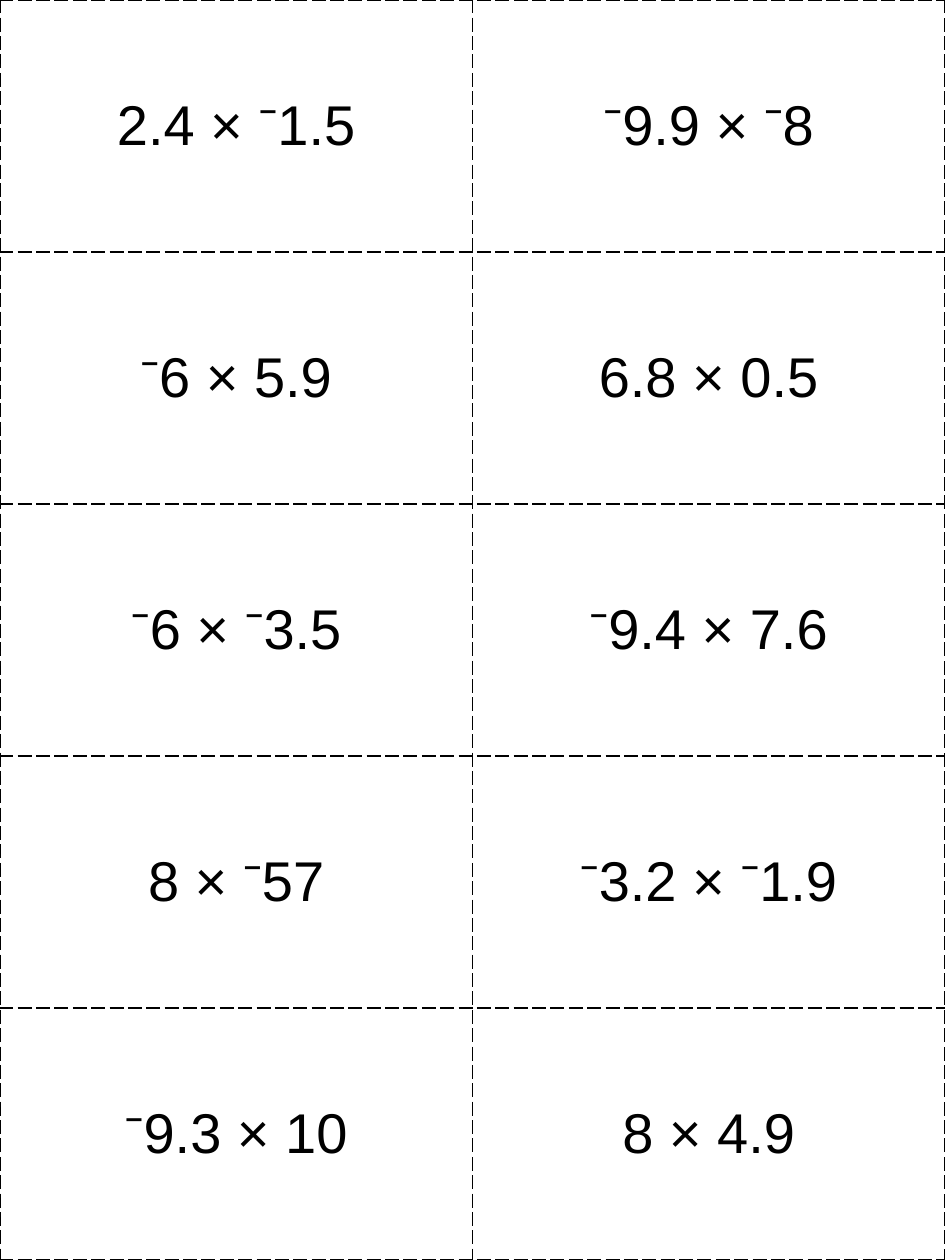
import pptx
import pptx.dml.color
import pptx.enum.text
import pptx.oxml.ns
import pptx.util
from lxml import etree
from pptx.util import Inches

PAGE_WIDTH, PAGE_HEIGHT = 7.5, 10
BLANK_LAYOUT = 6
PROBLEMS = [
    ["2.4 × ⁻1.5", "⁻9.9 × ⁻8"],
    ["⁻6 × 5.9", "6.8 × 0.5"],
    ["⁻6 × ⁻3.5", "⁻9.4 × 7.6"],
    ["8 × ⁻57", "⁻3.2 × ⁻1.9"],
    ["⁻9.3 × 10", "8 × 4.9"],
]


def color(hex_text):
    return pptx.dml.color.RGBColor.from_string(hex_text)


class CardSheet:
    """Holds the card style and the current slide."""

    font = "Arial"
    size = 32
    ink = "000000"
    border_width = 1
    border_dash = "lgDash"

    def __init__(self, page):
        self.page = page

    def add_cards(self, rows, left, top, width, height):
        """Add a table of equal cards filling the given area."""
        frame = self.page.shapes.add_table(
            len(rows), len(rows[0]),
            Inches(left), Inches(top), Inches(width), Inches(height))
        table = frame.table
        table.first_row = False
        table.horz_banding = False
        for row_index, row in enumerate(rows):
            for column_index, problem in enumerate(row):
                self.format_card(table.cell(row_index, column_index), problem)

    def format_card(self, cell, problem):
        cell.text_frame.text = problem
        cell.vertical_anchor = pptx.enum.text.MSO_ANCHOR.MIDDLE
        paragraph = cell.text_frame.paragraphs[0]
        paragraph.alignment = pptx.enum.text.PP_ALIGN.CENTER
        span = paragraph.runs[0]
        span.font.name = self.font
        span.font.size = pptx.util.Pt(self.size)
        span.font.color.rgb = color(self.ink)
        self.add_borders(cell)
        cell.fill.background()

    def add_borders(self, cell):
        qn = pptx.oxml.ns.qn
        properties = cell._tc.get_or_add_tcPr()
        for side in ("a:lnL", "a:lnR", "a:lnT", "a:lnB"):
            line = etree.SubElement(properties, qn(side))
            line.set("w", str(pptx.util.Pt(self.border_width)))
            fill = etree.SubElement(line, qn("a:solidFill"))
            etree.SubElement(fill, qn("a:srgbClr")).set("val", self.ink)
            etree.SubElement(line, qn("a:prstDash")).set("val", self.border_dash)


def main():
    deck = pptx.Presentation()
    deck.slide_width = Inches(PAGE_WIDTH)
    deck.slide_height = Inches(PAGE_HEIGHT)
    page = deck.slides.add_slide(deck.slide_layouts[BLANK_LAYOUT])
    CardSheet(page).add_cards(PROBLEMS, 0, 0, PAGE_WIDTH, PAGE_HEIGHT)
    deck.save("out.pptx")


if __name__ == "__main__":
    main()
